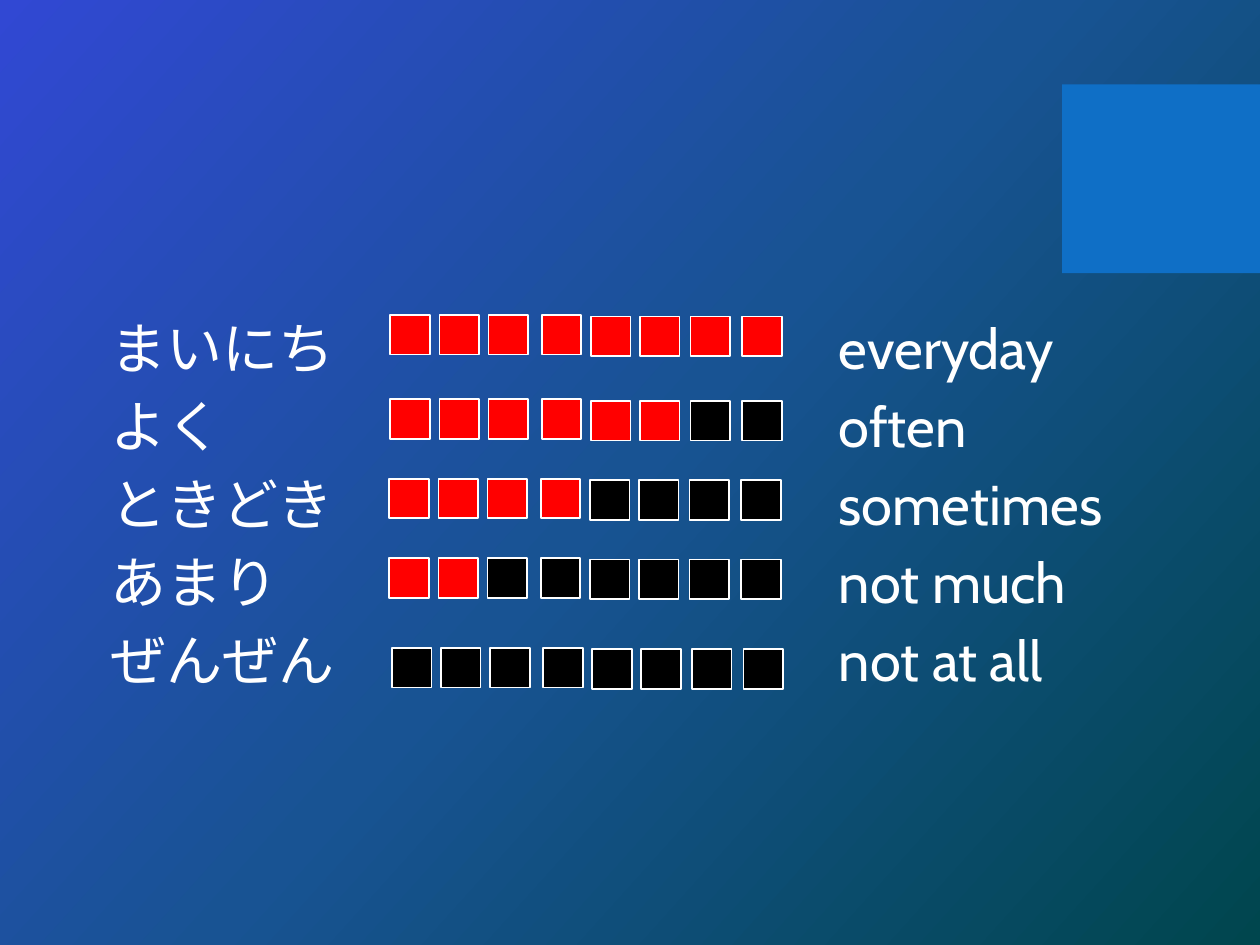
from copy import deepcopy

from pptx import Presentation
from pptx import util as u
from pptx.dml.color import RGBColor
from pptx.enum import shapes, text
from pptx.oxml.ns import qn

COLORS = {
    "white": "FFFFFF",
    "on": "FF0000",
    "off": "000000",
    "accent": "0F6FC6",
}
BACKGROUND = [(0, "3148D3"), (0.5, "185393"), (1, "00464E")]
OFFSETS = [0, 0.99, 1.98, 3.05, 4.04, 5.03, 6.05, 7.09]
SQUARE = 0.8
HALF_DROP = 0.03
ROWS = [
    ("まいにち", "everyday", 7.87, 6.35, 8),
    ("よく", "often", 7.87, 8.05, 6),
    ("ときどき", "sometimes", 7.85, 9.65, 4),
    ("あまり", "not much", 7.85, 11.25, 2),
    ("ぜんぜん", "not at all", 7.9, 13.06, 0),
]


class Deck:
    font = {"name": "Cabin", "size": u.Pt(32)}
    frame = {
        "word_wrap": True,
        "auto_size": text.MSO_AUTO_SIZE.NONE,
        "vertical_anchor": text.MSO_ANCHOR.TOP,
    }

    def __init__(self, s):
        self.s = s

    def color(self, name):
        return RGBColor.from_string(COLORS[name])

    def background(self, stops, angle):
        fill = self.s.background.fill
        fill.gradient()
        fill.gradient_angle = angle
        lst = self.s._element.find(".//" + qn("a:gsLst"))
        lst.append(deepcopy(lst[-1]))
        for stop, (position, value) in zip(fill.gradient_stops, stops):
            stop.position = position
            stop.color.rgb = RGBColor.from_string(value)

    def rect(self, box, fill, line=None):
        sp = self.s.shapes.add_shape(
            shapes.MSO_SHAPE.RECTANGLE, *map(u.Cm, box))
        sp.shadow.inherit = False
        sp.fill.solid()
        sp.fill.fore_color.rgb = self.color(fill)
        if line:
            sp.line.color.rgb = self.color(line)
            sp.line.width = u.Pt(1)
        else:
            sp.line.fill.background()

    def place(self, sp, box):
        for name, value in zip(("left", "top", "width", "height"), box):
            setattr(sp, name, u.Cm(value))

    def fill_text(self, tf, lines):
        for name, value in self.frame.items():
            setattr(tf, name, value)
        for i, line in enumerate(lines):
            p = tf.paragraphs[0] if i == 0 else tf.add_paragraph()
            pPr = p._p.get_or_add_pPr()
            pPr.set("marL", "0")
            pPr.set("indent", "0")
            pPr.append(pPr.makeelement(qn("a:buNone"), {}))
            p.line_spacing = 0.9
            p.space_before = u.Pt(10 if i else 0)
            r = p.add_run()
            r.text = line
            for name, value in self.font.items():
                setattr(r.font, name, value)
            r.font.color.rgb = self.color("white")

    def body(self, box, lines):
        sp = self.s.placeholders[1]
        self.place(sp, box)
        self.fill_text(sp.text_frame, lines)

    def textbox(self, box, lines):
        sp = self.s.shapes.add_textbox(*map(u.Cm, box))
        self.fill_text(sp.text_frame, lines)

    def meter(self, left, top, count):
        for i, offset in enumerate(OFFSETS):
            drop = HALF_DROP if i >= len(OFFSETS) // 2 else 0
            self.rect((left + offset, top + drop, SQUARE, SQUARE),
                      "on" if i < count else "off", "white")


def main():
    prs = Presentation()
    prs.slide_width, prs.slide_height = u.Cm(25.4), u.Cm(19.05)
    s = prs.slides.add_slide(prs.slide_layouts[1])
    title = s.shapes.title._element
    title.getparent().remove(title)

    deck = Deck(s)
    deck.background(BACKGROUND, 318)
    deck.rect((21.41, 1.7, 3.99, 3.81), "accent")
    deck.body((1.98, 6.35, 13.44, 8.18), [row[0] for row in ROWS])
    for _, _, left, top, count in ROWS:
        deck.meter(left, top, count)
    deck.textbox((16.66, 6.35, 6.3, 8.18), [row[1] for row in ROWS])
    prs.save("out.pptx")


if __name__ == "__main__":
    main()
